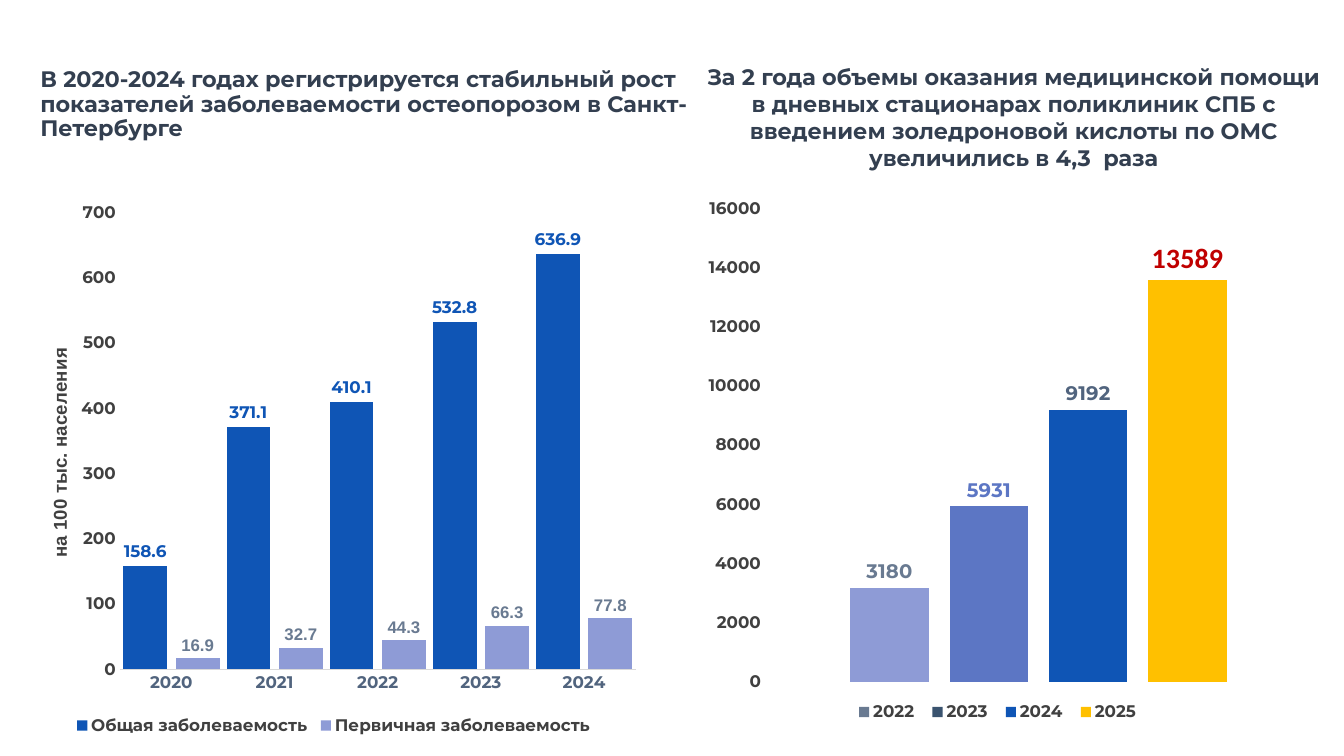
from lxml import etree
from pptx import Presentation
from pptx.chart.data import CategoryChartData
from pptx.dml.color import RGBColor
from pptx.enum.chart import XL_CHART_TYPE, XL_LABEL_POSITION, XL_LEGEND_POSITION, XL_TICK_MARK
from pptx.enum.text import MSO_ANCHOR, MSO_AUTO_SIZE, PP_ALIGN
from pptx.oxml.ns import qn
from pptx.util import Inches, Pt

COLORS = {
    "heading": "333F50", "text": "404040", "black": "000000", "axis": "D9D9D9",
    "slate": "51647E", "gray": "697A91", "navy": "3A536F", "blue": "0F55B5",
    "indigo": "5C76C4", "lavender": "8E9BD6", "gold": "FFC000", "red": "C00000",
}


def rgb(name):
    return RGBColor.from_string(COLORS[name])


def place_part(element, index, box, inner=False):
    """Place a chart part at (x, y[, width, height]) as fractions of the chart."""
    for old_layout in element.findall(qn("c:layout")):
        element.remove(old_layout)
    layout = etree.Element(qn("c:layout"))
    manual = etree.SubElement(layout, qn("c:manualLayout"))
    settings = [("layoutTarget", "inner")] if inner else []
    settings += [("xMode", "edge"), ("yMode", "edge")]
    settings += zip(("x", "y", "w", "h"), box)
    for tag, value in settings:
        etree.SubElement(manual, qn(f"c:{tag}")).set("val", str(value))
    element.insert(index, layout)


class SlideBuilder:
    font_name = "Montserrat"

    def __init__(self, slide):
        self.slide = slide

    def style(self, font, size, color, name=font_name, bold=True):
        font.name = name
        font.size = Pt(size)
        font.bold = bold
        font.color.rgb = rgb(color)

    def heading(self, shape, box, text, alignment, anchor, line_spacing):
        shape.left, shape.top, shape.width, shape.height = map(Inches, box)
        frame = shape.text_frame
        frame.word_wrap = True
        frame.auto_size = MSO_AUTO_SIZE.NONE
        frame.vertical_anchor = anchor
        paragraph = frame.paragraphs[0]
        paragraph.alignment = alignment
        paragraph.line_spacing = line_spacing
        run = paragraph.add_run()
        run.text = text
        self.style(run.font, 16, "heading")

    def text_box(self, box, *details):
        shape = self.slide.shapes.add_textbox(*map(Inches, box))
        self.heading(shape, box, *details)

    def column_chart(self, box, categories, series_rows, gap, overlap,
                     maximum, step, label_size, label_format, plot_box, legend_box):
        data = CategoryChartData()
        data.categories = categories
        for row in series_rows:
            data.add_series(row["name"], row["values"])
        chart = self.slide.shapes.add_chart(
            XL_CHART_TYPE.COLUMN_CLUSTERED, *map(Inches, box), data).chart
        self.style(chart.font, 10, "black", "Calibri", False)
        chart.has_title = False

        # Columns and value labels
        plot = chart.plots[0]
        plot.gap_width, plot.overlap = gap, overlap
        plot.vary_by_categories = False
        for series, row in zip(plot.series, series_rows):
            series.invert_if_negative = False
            series.format.fill.solid()
            series.format.fill.fore_color.rgb = rgb(row["color"])
            if "point" in row:
                fill = series.points[0].format.fill
                fill.solid()
                fill.fore_color.rgb = rgb(row["point"])
            labels = series.data_labels
            labels.show_value = True
            labels.position = XL_LABEL_POSITION.OUTSIDE_END
            labels.number_format = label_format
            labels.number_format_is_linked = False
            self.style(labels.font, label_size, row["label"],
                       row.get("label_font", self.font_name))

        # Axes
        axis = chart.value_axis
        axis.minimum_scale, axis.maximum_scale, axis.major_unit = 0, maximum, step
        axis.has_major_gridlines = False
        axis.major_tick_mark = XL_TICK_MARK.NONE
        axis.format.line.fill.background()
        axis.tick_labels.number_format = "General"
        axis.tick_labels.number_format_is_linked = False
        self.style(axis.tick_labels.font, 12, "text")
        category_axis = chart.category_axis
        category_axis.major_tick_mark = XL_TICK_MARK.NONE
        category_axis.format.line.color.rgb = rgb("axis")
        category_axis.format.line.width = Pt(0.75)
        self.style(category_axis.tick_labels.font, 12, "slate")

        # Legend and plot placement
        chart.has_legend = True
        chart.legend.position = XL_LEGEND_POSITION.BOTTOM
        chart.legend.include_in_layout = False
        self.style(chart.legend.font, 12, "text")
        plot_area = chart.element.find(".//" + qn("c:plotArea"))
        place_part(plot_area, 0, plot_box, inner=True)
        place_part(chart.element.find(".//" + qn("c:legend")), 1, legend_box)
        return chart

    def value_axis_title(self, chart, text, position):
        frame = chart.value_axis.axis_title.text_frame
        run = frame.paragraphs[0].add_run()
        run.text = text
        self.style(run.font, 13.3, "text", "Arial")
        body = chart.element.find(".//" + qn("c:valAx") + "/" + qn("c:title"))
        body.find(".//" + qn("a:bodyPr")).set("rot", "-5400000")
        place_part(body, 1, position)

    def highlight_label(self, series, text):
        label = series.points[0].data_label
        run = label.text_frame.paragraphs[0].add_run()
        run.text = text
        self.style(run.font, 20, "red", "Calibri")
        label.position = XL_LABEL_POSITION.OUTSIDE_END


def main():
    presentation = Presentation()
    presentation.slide_width = Inches(13.33)
    presentation.slide_height = Inches(7.5)
    slide = presentation.slides.add_slide(presentation.slide_layouts[5])
    builder = SlideBuilder(slide)

    # Headings
    builder.heading(
        slide.shapes.title, (0.3, 0.32, 6.7, 1.44),
        "В 2020-2024 годах регистрируется стабильный рост показателей "
        "заболеваемости остеопорозом в Санкт-Петербурге",
        PP_ALIGN.LEFT, MSO_ANCHOR.MIDDLE, 0.9)
    builder.text_box(
        (6.89, 0.58, 6.33, 1.18),
        "За 2 года объемы оказания медицинской помощи в дневных стационарах "
        "поликлиник СПБ с введением золедроновой кислоты по ОМС "
        "увеличились в 4,3  раза",
        PP_ALIGN.CENTER, MSO_ANCHOR.TOP, 1.0)

    # Incidence by year
    incidence = builder.column_chart(
        (0.19, 1.89, 6.24, 5.46), [str(year) for year in range(2020, 2025)],
        [{"name": "Общая заболеваемость", "color": "blue", "label": "blue",
          "values": (158.6, 371.1, 410.1, 532.8, 636.9)},
         {"name": "Первичная заболеваемость", "color": "lavender", "label": "gray",
          "label_font": "Arial", "values": (16.9, 32.7, 44.3, 66.3, 77.8)}],
        gap=16, overlap=-20, maximum=700, step=100, label_size=12,
        label_format="#,##0.0", plot_box=(0.16, 0.04, 0.82, 0.83),
        legend_box=(0.08, 0.95, 0.84, 0.05))
    builder.value_axis_title(incidence, "на 100 тыс. населения", (0.04, 0.28))

    # Day hospital care volumes
    volumes = builder.column_chart(
        (6.9, 1.85, 6.24, 5.46), ["1"],
        [{"name": "2022", "values": (3180,), "color": "gray",
          "point": "lavender", "label": "gray"},
         {"name": "2023", "values": (5931,), "color": "navy",
          "point": "indigo", "label": "indigo"},
         {"name": "2024", "values": (9192,), "color": "blue", "label": "slate"},
         {"name": "2025", "values": (13589,), "color": "gold", "label": "text"}],
        gap=219, overlap=-27, maximum=16000, step=2000, label_size=14,
        label_format="General", plot_box=(0.11, 0.04, 0.87, 0.86),
        legend_box=(0.24, 0.93, 0.48, 0.05))
    volumes.category_axis.visible = False
    builder.highlight_label(volumes.plots[0].series[3], "13589")

    presentation.save("out.pptx")


if __name__ == "__main__":
    main()
